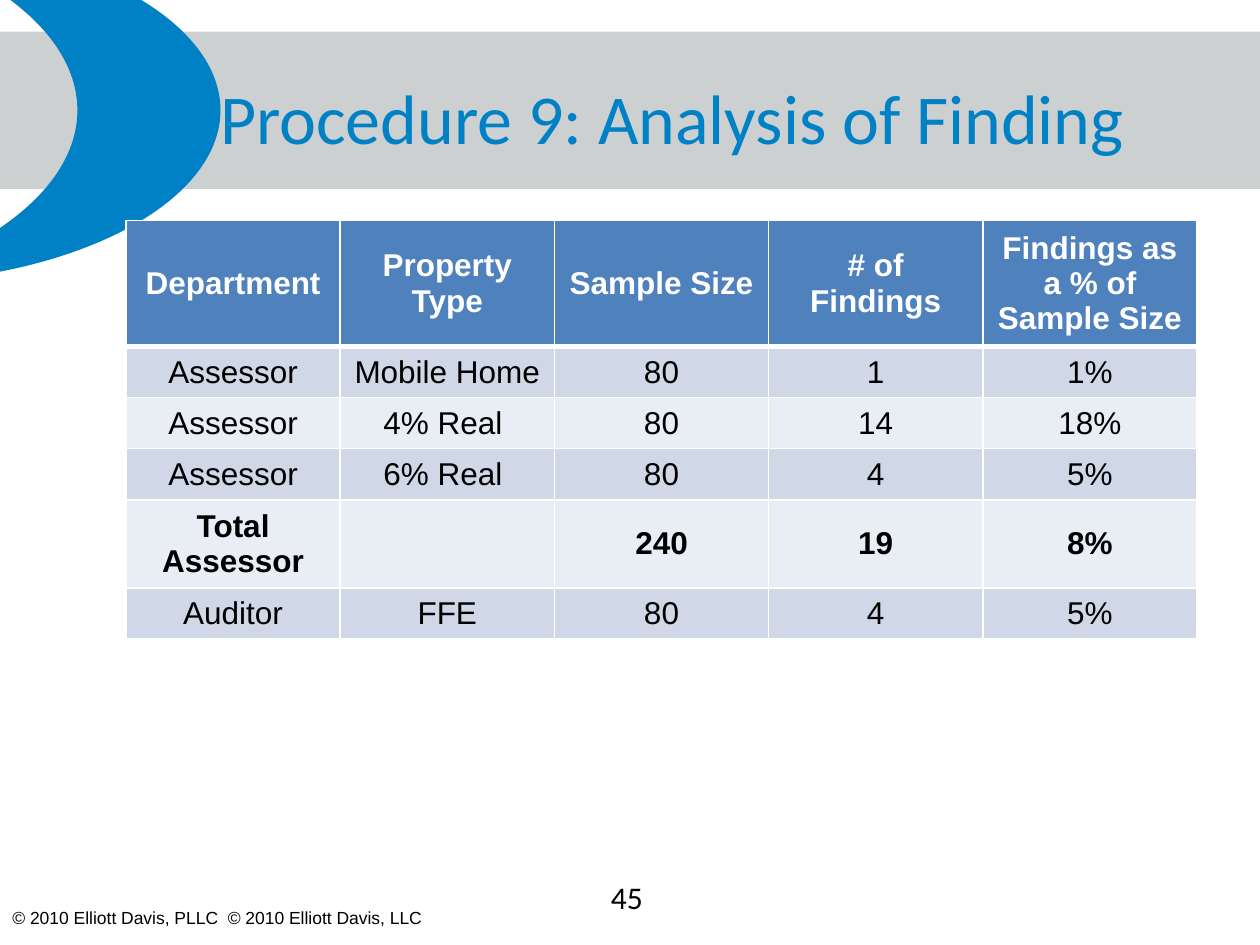
import pptx
import pptx.util
import pptx.dml.color
import pptx.enum.shapes
import pptx.enum.text
import pptx.oxml
import pptx.oxml.ns

Pt = pptx.util.Pt
RGBColor = pptx.dml.color.RGBColor
SHAPE = pptx.enum.shapes.MSO_SHAPE
ALIGN = pptx.enum.text.PP_ALIGN
ANCHOR = pptx.enum.text.MSO_ANCHOR

BRAND_BLUE = RGBColor(0x00, 0x81, 0xC6)
BAND_GRAY = RGBColor(0xC8, 0xCB, 0xCB)
HEADER_BLUE = RGBColor(0x4F, 0x81, 0xBD)
ROW_DARK = RGBColor(0xD0, 0xD8, 0xE8)
ROW_LIGHT = RGBColor(0xE9, 0xED, 0xF4)
WHITE = RGBColor(0xFF, 0xFF, 0xFF)
BLACK = RGBColor(0x00, 0x00, 0x00)

TITLE = "Procedure 9: Analysis of Finding"
COPYRIGHT = "© 2010 Elliott Davis, PLLC  © 2010 Elliott Davis, LLC"
PAGE_NUMBER = "45"
FINDINGS = [
    ("Department", "Property Type", "Sample Size", "# of Findings",
     "Findings as a % of Sample Size"),
    ("Assessor", "Mobile Home", "80", "1", "1%"),
    ("Assessor", "4% Real ", "80", "14", "18%"),
    ("Assessor", "6% Real ", "80", "4", "5%"),
    ("Total Assessor", "", "240", "19", "8%"),
    ("Auditor", "FFE", "80", "4", "5%"),
]
HEADER_ROW, TOTAL_ROW = 0, 4
COLUMN_WIDTH = 122.4
ROW_HEIGHT = 29.2
TALL_ROWS = {HEADER_ROW: 67.2, TOTAL_ROW: 48}


def style_font(font, **values):
    for attribute, value in values.items():
        if attribute == "color":
            font.color.rgb = value
        else:
            setattr(font, attribute, value)


def add_text(slide, text, box, align, anchor, wrap, **font_values):
    frame = slide.shapes.add_textbox(*map(Pt, box)).text_frame
    frame.word_wrap = wrap
    frame.vertical_anchor = anchor
    paragraph = frame.paragraphs[0]
    paragraph.alignment = align
    run = paragraph.add_run()
    run.text = text
    style_font(run.font, **font_values)


def add_backdrop(slide, preset, box, color):
    backdrop = slide.shapes.add_shape(preset, *map(Pt, box))
    backdrop.shadow.inherit = False
    backdrop.fill.solid()
    backdrop.fill.fore_color.rgb = color
    backdrop.line.fill.background()
    return backdrop


def set_borders(cell, bottom_width):
    """Draw white cell borders; call before the fill, which must follow them."""
    properties = cell._tc.get_or_add_tcPr()
    for side, width in (("L", 1), ("R", 1), ("T", 1), ("B", bottom_width)):
        properties.append(pptx.oxml.parse_xml(
            f'<a:ln{side} {pptx.oxml.ns.nsdecls("a")} w="{Pt(width)}">'
            f'<a:solidFill><a:srgbClr val="{WHITE}"/></a:solidFill></a:ln{side}>'))


def add_findings_table(slide):
    heights = [TALL_ROWS.get(row, ROW_HEIGHT) for row in range(len(FINDINGS))]
    columns = len(FINDINGS[0])
    table = slide.shapes.add_table(
        len(FINDINGS), columns, Pt(72), Pt(126),
        Pt(columns * COLUMN_WIDTH), Pt(sum(heights))).table
    for column in table.columns:
        column.width = Pt(COLUMN_WIDTH)
    for row, entries in enumerate(FINDINGS):
        table.rows[row].height = Pt(heights[row])
        is_header = row == HEADER_ROW
        fill = HEADER_BLUE if is_header else (ROW_LIGHT, ROW_DARK)[row % 2]
        for column, entry in enumerate(entries):
            cell = table.cell(row, column)
            cell.text = entry
            cell.vertical_anchor = ANCHOR.MIDDLE
            # The border under the header belongs to both adjoining cells.
            set_borders(cell, 3 if is_header else 1)
            if row == HEADER_ROW + 1:
                top = cell._tc.tcPr.find(pptx.oxml.ns.qn("a:lnT"))
                top.set("w", str(Pt(3)))
            cell.fill.solid()
            cell.fill.fore_color.rgb = fill
            paragraph = cell.text_frame.paragraphs[0]
            paragraph.alignment = ALIGN.CENTER
            style_font(paragraph.font, name="Arial", size=Pt(18),
                       bold=row in TALL_ROWS,
                       color=WHITE if is_header else BLACK)


def main():
    deck = pptx.Presentation()
    deck.slide_width, deck.slide_height = Pt(720), Pt(540)
    slide = deck.slides.add_slide(deck.slide_layouts[6])

    band = add_backdrop(slide, SHAPE.RECTANGLE, (0, 18, 720, 90), BAND_GRAY)
    band_color = band.fill._xPr.find(".//" + pptx.oxml.ns.qn("a:srgbClr"))
    band_color.append(pptx.oxml.parse_xml(
        f'<a:alpha {pptx.oxml.ns.nsdecls("a")} val="90000"/>'))

    crescent = add_backdrop(slide, SHAPE.MOON, (-72, -36, 198, 198), BRAND_BLUE)
    crescent.rotation = 180
    crescent.adjustments[0] = 0.413

    add_text(slide, COPYRIGHT, (0, 514.8, 257.8, 19.4), ALIGN.LEFT, ANCHOR.TOP,
             False, name="Arial", size=Pt(10), color=BLACK)
    add_text(slide, TITLE, (60, 21.6, 648, 90), ALIGN.CENTER, ANCHOR.MIDDLE,
             True, name="Calibri", size=Pt(40), color=BRAND_BLUE)
    add_findings_table(slide)
    add_text(slide, PAGE_NUMBER, (342, 498.2, 36, 28.8), ALIGN.LEFT, ANCHOR.TOP,
             True, name="Calibri", size=Pt(18), color=BLACK)

    deck.save("out.pptx")


if __name__ == "__main__":
    main()
